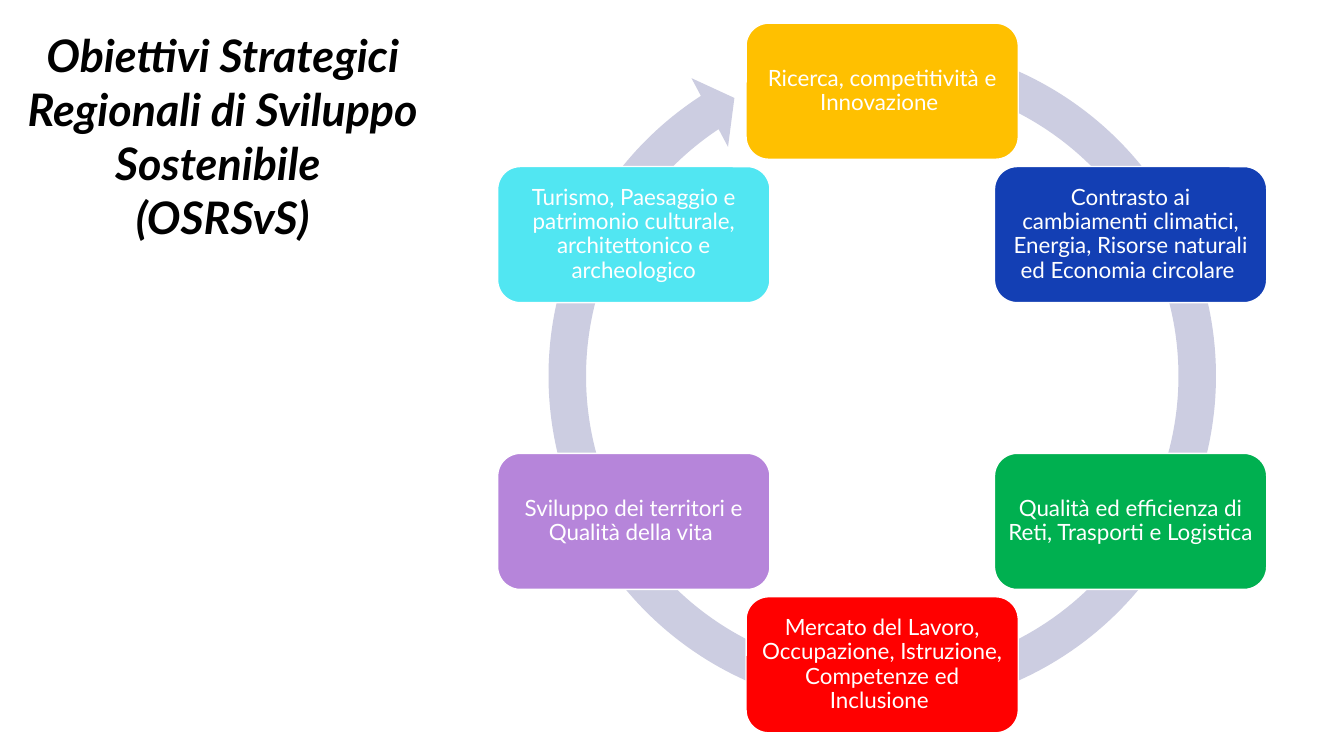
"""Build the slide of regional strategic objectives arranged around a cycle."""
from dataclasses import dataclass
from math import cos, radians, sin

from pptx import Presentation
from pptx.dml.color import RGBColor
from pptx.enum.shapes import MSO_SHAPE
from pptx.enum.text import MSO_ANCHOR, PP_ALIGN
from pptx.slide import Slide
from pptx.text.text import TextFrame
from pptx.util import Inches, Pt

FONT = "Lato"
CENTER_X, CENTER_Y = 8.75, 3.75
ORBIT = 2.845
BOX_WIDTH, BOX_HEIGHT = 2.7, 1.35
RING_SIZE = 7.02
RING_ADJUSTMENTS = (0.053, 3.126, 142.078, 171.389, 0.055)


@dataclass(frozen=True)
class Objective:
    wording: str
    color: str


OBJECTIVES = (
    Objective("Ricerca, competitività e Innovazione ", "FFC000"),
    Objective("Contrasto ai cambiamenti climatici, Energia, Risorse naturali "
              "ed Economia circolare ", "133FB4"),
    Objective("Qualità ed efficienza di Reti, Trasporti e Logistica ", "00B050"),
    Objective("Mercato del Lavoro, Occupazione, Istruzione, Competenze "
              "ed Inclusione ", "FF0000"),
    Objective("Sviluppo dei territori e Qualità della vita ", "B685DA"),
    Objective("Turismo, Paesaggio e patrimonio culturale, architettonico "
              "e archeologico", "51E6F2"),
)
TITLE_LINES = ("Obiettivi Strategici Regionali di Sviluppo Sostenibile ", "(OSRSvS)")


def rgb(value: str) -> RGBColor:
    return RGBColor.from_string(value)


def write_lines(frame: TextFrame, lines: tuple[str, ...], size: float, color: str,
                emphasis: bool = False, spacing: float = 1.0) -> None:
    frame.word_wrap = True
    for index, line in enumerate(lines):
        paragraph = frame.add_paragraph() if index else frame.paragraphs[0]
        paragraph.alignment = PP_ALIGN.CENTER
        paragraph.line_spacing = spacing
        run = paragraph.add_run()
        run.text = line
        run.font.name = FONT
        run.font.size = Pt(size)
        run.font.bold = run.font.italic = emphasis
        run.font.color.rgb = rgb(color)


def draw_ring(slide: Slide) -> None:
    ring = slide.shapes.add_shape(
        MSO_SHAPE.CIRCULAR_ARROW,
        Inches(CENTER_X - RING_SIZE / 2), Inches(CENTER_Y - 0.02 - RING_SIZE / 2),
        Inches(RING_SIZE), Inches(RING_SIZE))
    for index, value in enumerate(RING_ADJUSTMENTS):
        ring.adjustments[index] = value
    ring.shadow.inherit = False
    ring.fill.solid()
    ring.fill.fore_color.rgb = rgb("CCCDE1")
    ring.line.fill.background()


def draw_objective(slide: Slide, objective: Objective, angle: float) -> None:
    box = slide.shapes.add_shape(
        MSO_SHAPE.ROUNDED_RECTANGLE,
        Inches(CENTER_X + ORBIT * sin(angle) - BOX_WIDTH / 2),
        Inches(CENTER_Y - ORBIT * cos(angle) - BOX_HEIGHT / 2),
        Inches(BOX_WIDTH), Inches(BOX_HEIGHT))
    box.shadow.inherit = False
    box.fill.solid()
    box.fill.fore_color.rgb = rgb(objective.color)
    box.line.color.rgb = rgb("FFFFFF")
    box.line.width = Pt(1)
    frame = box.text_frame
    frame.vertical_anchor = MSO_ANCHOR.MIDDLE
    frame.margin_left = frame.margin_right = Inches(0.07)
    frame.margin_top = frame.margin_bottom = Inches(0.07)
    write_lines(frame, (objective.wording,), 16, "FFFFFF", spacing=0.9)


def draw_title(slide: Slide) -> None:
    title = slide.shapes.add_textbox(Inches(0), Inches(0.23), Inches(4.42), Inches(2.26))
    write_lines(title.text_frame, TITLE_LINES, 32, "000000", emphasis=True)


def main() -> None:
    presentation = Presentation()
    presentation.slide_width = Inches(13.33)
    presentation.slide_height = Inches(7.5)
    slide = presentation.slides.add_slide(presentation.slide_layouts[6])
    draw_ring(slide)
    for index, objective in enumerate(OBJECTIVES):
        draw_objective(slide, objective, radians(index * 360 / len(OBJECTIVES)))
    draw_title(slide)
    presentation.save("out.pptx")


if __name__ == "__main__":
    main()
